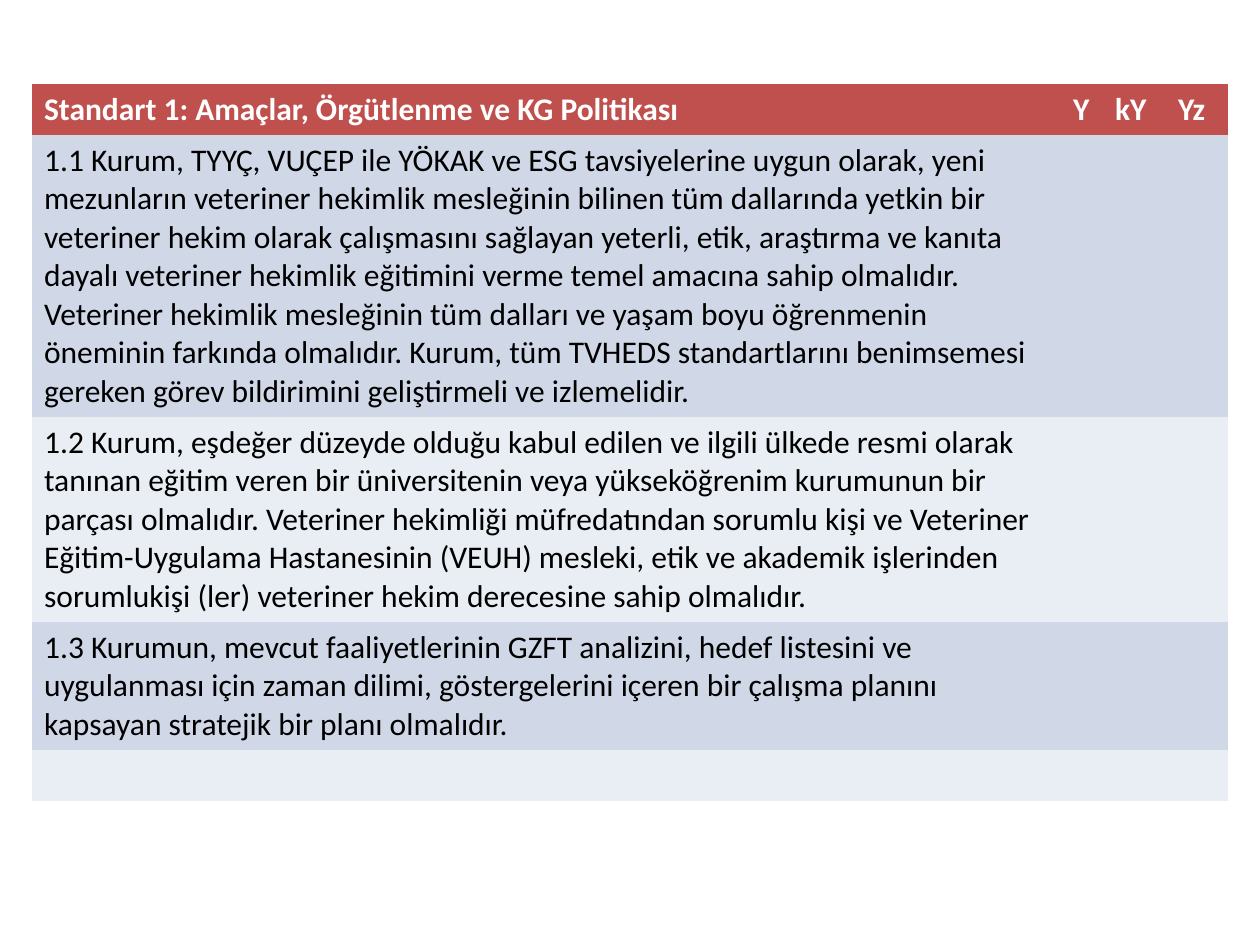
from dataclasses import dataclass

from pptx import Presentation
from pptx.dml.color import RGBColor as Rgb
from pptx.oxml.ns import qn
from pptx.util import Pt

FONT = "Calibri"
FONT_SIZE = 18
HEADER_FILL = "C0504D"
BAND_FILLS = ("D0D8E8", "E9EDF4")
NO_STYLE_NO_GRID = "{2D5ABB26-0587-4C30-8999-92F81FD0307C}"
COLUMN_WIDTHS = (588, 24, 36, 36)
LEFT, TOP = 18, 48


@dataclass(frozen=True)
class Row:
    height: float
    fill: str
    texts: tuple[str, ...] = ()
    color: str = "000000"
    bold: bool = False


HEADER = Row(
    29.2, HEADER_FILL,
    ("Standart 1: Amaçlar, Örgütlenme ve KG Politikası", "Y", "kY", "Yz"),
    "FFFFFF", True,
)

# Height and wording of each row under the header
STANDARDS = (
    (161.2,
     "1.1 Kurum, TYYÇ, VUÇEP ile YÖKAK ve ESG tavsiyelerine uygun olarak, yeni "
     "mezunların veteriner hekimlik mesleğinin bilinen tüm dallarında yetkin bir "
     "veteriner hekim olarak çalışmasını sağlayan yeterli, etik, araştırma ve kanıta "
     "dayalı veteriner hekimlik eğitimini verme temel amacına sahip olmalıdır. "
     "Veteriner hekimlik mesleğinin tüm dalları ve yaşam boyu öğrenmenin "
     "öneminin farkında olmalıdır. Kurum, tüm TVHEDS standartlarını benimsemesi "
     "gereken görev bildirimini geliştirmeli ve izlemelidir."),
    (117.1,
     "1.2 Kurum, eşdeğer düzeyde olduğu kabul edilen ve ilgili ülkede resmi olarak "
     "tanınan eğitim veren bir üniversitenin veya yükseköğrenim kurumunun bir "
     "parçası olmalıdır. Veteriner hekimliği müfredatından sorumlu kişi ve Veteriner "
     "Eğitim-Uygulama Hastanesinin (VEUH) mesleki, etik ve akademik işlerinden "
     "sorumlukişi (ler) veteriner hekim derecesine sahip olmalıdır."),
    (73.1,
     "1.3 Kurumun, mevcut faaliyetlerinin GZFT analizini, hedef listesini ve "
     "uygulanması için zaman dilimi, göstergelerini içeren bir çalışma planını "
     "kapsayan stratejik bir planı olmalıdır."),
    (29.2, ""),
)


def rgb(code: str) -> Rgb:
    return Rgb.from_string(code)


def add_text(cell, text: str, row: Row) -> None:
    para = cell.text_frame.paragraphs[0]
    para.font.size = Pt(FONT_SIZE)
    if not text:
        return
    span = para.add_run()
    span.text = text
    span.font.name = FONT
    span.font.size = Pt(FONT_SIZE)
    span.font.bold = row.bold
    span.font.color.rgb = rgb(row.color)


def fill_row(table, index: int, row: Row) -> None:
    table.rows[index].height = Pt(row.height)
    for column in range(len(COLUMN_WIDTHS)):
        cell = table.cell(index, column)
        cell.fill.solid()
        cell.fill.fore_color.rgb = rgb(row.fill)
        add_text(cell, row.texts[column] if column < len(row.texts) else "", row)


def add_standards_table(page, rows: list[Row]) -> None:
    frame = page.shapes.add_table(
        len(rows), len(COLUMN_WIDTHS), Pt(LEFT), Pt(TOP),
        Pt(sum(COLUMN_WIDTHS)), Pt(sum(row.height for row in rows)),
    )
    table = frame.table
    # Plain style: no grid lines between the filled cells
    style = next(frame.element.iter(qn("a:tableStyleId")))
    style.text = NO_STYLE_NO_GRID
    for column, width in zip(table.columns, COLUMN_WIDTHS):
        column.width = Pt(width)
    for index, row in enumerate(rows):
        fill_row(table, index, row)


def main() -> None:
    deck = Presentation()
    deck.slide_width, deck.slide_height = Pt(720), Pt(540)
    page = deck.slides.add_slide(deck.slide_layouts[6])

    # Header, then rows in alternating bands
    bands = [
        Row(height, BAND_FILLS[index % 2], (text,))
        for index, (height, text) in enumerate(STANDARDS)
    ]
    add_standards_table(page, [HEADER, *bands])
    deck.save("out.pptx")


if __name__ == "__main__":
    main()
